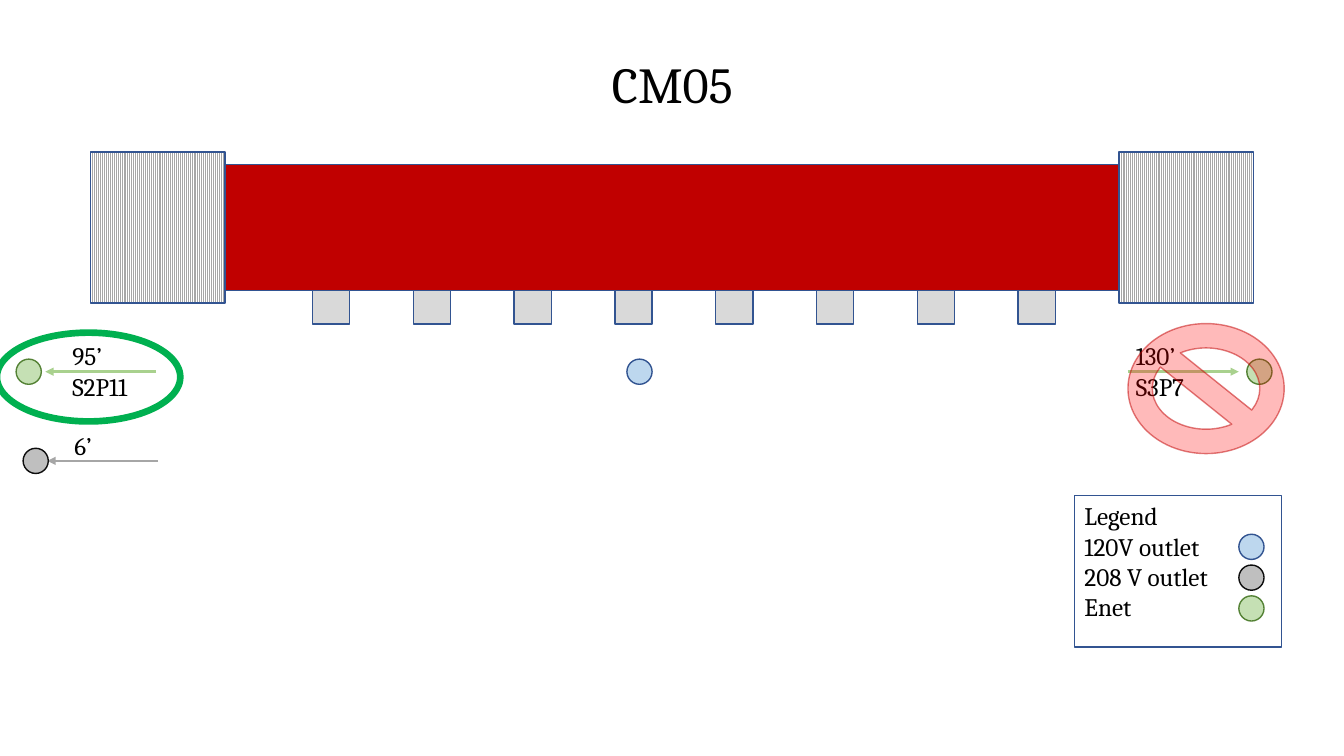
from dataclasses import dataclass

from lxml.etree import SubElement
from pptx import Presentation
from pptx.dml.color import RGBColor
from pptx.enum.dml import MSO_PATTERN
from pptx.enum.shapes import MSO_CONNECTOR, MSO_SHAPE
from pptx.enum.text import MSO_ANCHOR, MSO_AUTO_SIZE, PP_ALIGN
from pptx.oxml.ns import qn
from pptx.util import Pt


@dataclass(frozen=True)
class Theme:
    font: str = "Cambria"
    title_size: float = 36
    body_size: float = 18
    text: str = "000000"
    outline: str = "325491"
    module: str = "C00000"
    foot: str = "D9D9D9"
    hatch: str = "A6A6A6"
    paper: str = "FFFFFF"
    approved: str = "00B050"
    banned: str = "FF0000"
    banned_outline: str = "C00000"
    outlet_size: float = 18


THEME = Theme()
# Outlet kind: fill, outline, arrow
OUTLETS = {
    "120V": ("BDD7EE", THEME.outline, THEME.outline),
    "208V": ("BFBFBF", "0D0D0D", "A6A6A6"),
    "Enet": ("C5E0B4", "548235", "A9D18E"),
}
FRAME_FORMAT = {
    "word_wrap": False,
    "vertical_anchor": MSO_ANCHOR.TOP,
    "margin_left": Pt(7.2),
    "margin_right": Pt(7.2),
    "margin_top": Pt(3.6),
    "margin_bottom": Pt(3.6),
}


def color(value):
    return RGBColor.from_string(value)


def apply_format(target, values):
    for name, value in values.items():
        setattr(target, name, value)


def write_text(shape, text, size=THEME.body_size, alignment=PP_ALIGN.LEFT, **frame_values):
    frame = shape.text_frame
    frame.text = text
    apply_format(frame, FRAME_FORMAT | frame_values)
    for paragraph in frame.paragraphs:
        paragraph.alignment = alignment
        for run in paragraph.runs:
            apply_format(run.font, {"name": THEME.font, "size": Pt(size)})
            run.font.color.rgb = color(THEME.text)


def add_figure(shapes, kind, box, fill=None, outline=THEME.outline, weight=1):
    shape = shapes.add_shape(kind, *map(Pt, box))
    shape.shadow.inherit = False
    if fill:
        shape.fill.solid()
        shape.fill.fore_color.rgb = color(fill)
    else:
        shape.fill.background()
    shape.line.color.rgb = color(outline)
    shape.line.width = Pt(weight)
    return shape


def add_outlet(shapes, kind, left, middle):
    """Place an outlet circle by its left edge and its vertical middle."""
    size = THEME.outlet_size
    fill, outline, _ = OUTLETS[kind]
    add_figure(shapes, MSO_SHAPE.OVAL, (left, middle - size / 2, size, size), fill, outline)


def add_arrow(shapes, start, tip, middle, tint):
    arrow = shapes.add_connector(
        MSO_CONNECTOR.STRAIGHT, Pt(start), Pt(middle), Pt(tip), Pt(middle))
    arrow.line.color.rgb = color(tint)
    arrow.line.width = Pt(1.75)
    properties = arrow.element.spPr
    SubElement(properties.find(qn("a:ln")), qn("a:tailEnd"), type="triangle")
    SubElement(properties, qn("a:effectLst"))


def add_title(slide, box):
    title = slide.shapes.title
    apply_format(title, dict(zip(("left", "top", "width", "height"), map(Pt, box))))
    write_text(title, "CM05", THEME.title_size, PP_ALIGN.CENTER,
               auto_size=MSO_AUTO_SIZE.SHAPE_TO_FIT_TEXT)


def add_cryomodule(slide, box):
    """Draw the red body with its row of feet and a hatched cap at each end."""
    left, top, width, height = box
    shapes = slide.shapes.add_group_shape().shapes
    cap_width = 96
    body_left, body_top, body_height = left + 86.4, top + 9, 90
    add_figure(shapes, MSO_SHAPE.RECTANGLE,
               (body_left, body_top, width - 182.4 + 9.6, body_height), THEME.module)
    for index in range(8):
        add_figure(shapes, MSO_SHAPE.RECTANGLE,
                   (body_left + 72 * (index + 1), body_top + body_height, 26.6, 24), THEME.foot)
    for cap_left in (left, left + width - cap_width):
        cap = add_figure(shapes, MSO_SHAPE.RECTANGLE, (cap_left, top, cap_width, height))
        cap.fill.patterned()
        cap.fill.pattern = MSO_PATTERN.LIGHT_VERTICAL
        cap.fill.fore_color.rgb = color(THEME.hatch)
        cap.fill.back_color.rgb = color(THEME.paper)


def add_legend(slide, box):
    left, top, _, _ = box
    frame = add_figure(slide.shapes, MSO_SHAPE.RECTANGLE, box, weight=0.75)
    write_text(frame, "Legend\v120V outlet\n208 V outlet\nEnet")
    for row, kind in enumerate(OUTLETS):
        add_outlet(slide.shapes, kind, left + 117.4, top + 36.4 + 22 * row)


def add_cable_run(slide, box, kind, text, outlet_offset, text_offset):
    """Draw an arrow towards an outlet; the box is the arrow's left, middle and width,
    then the label's width and height."""
    left, middle, length, text_width, text_height = box
    shapes = slide.shapes.add_group_shape().shapes
    ends = (left + length, left) if outlet_offset < 0 else (left, left + length)
    add_arrow(shapes, *ends, middle, OUTLETS[kind][2])
    label = shapes.add_textbox(
        *map(Pt, (left + text_offset, middle - 25.7, text_width, text_height)))
    write_text(label, text, auto_size=MSO_AUTO_SIZE.SHAPE_TO_FIT_TEXT)
    add_outlet(shapes, kind, left + outlet_offset, middle)


def add_ban(slide, box):
    """Lay a see-through prohibition sign over the box."""
    sign = add_figure(slide.shapes, MSO_SHAPE.NO_SYMBOL, box, THEME.banned, THEME.banned_outline)
    tints = sign.element.spPr.iter(qn("a:srgbClr"))
    for tint, opacity in zip(list(tints), (27, 50)):
        SubElement(tint, qn("a:alpha"), val=str(opacity * 1000))


def main():
    presentation = Presentation()
    apply_format(presentation, {"slide_width": Pt(960), "slide_height": Pt(540)})
    slide = presentation.slides.add_slide(presentation.slide_layouts[5])
    add_title(slide, (427.7, 34.6, 105.1, 51.1))
    add_cryomodule(slide, (64.8, 108.5, 830.4, 108))
    add_legend(slide, (767.5, 354.2, 147.6, 108))
    add_cable_run(slide, (32.4, 265.5, 79.2, 64.1, 51.1), "Enet", "95’\nS2P11", -20.9, 12.2)
    add_cable_run(slide, (805.7, 265.5, 79.2, 54, 51.1), "Enet", "130’\nS3P7", 84.9, -1.5)
    add_outlet(slide.shapes, "120V", 447.8, 265.5)
    add_cable_run(slide, (33.8, 329.2, 79.2, 28.8, 28.8), "208V", "6’", -17.3, 12.2)
    add_figure(slide.shapes, MSO_SHAPE.OVAL, (-2.2, 237.6, 131, 63.4),
               outline=THEME.approved, weight=4.75)
    add_ban(slide, (805.7, 231.1, 111.6, 92.9))
    presentation.save("out.pptx")


if __name__ == "__main__":
    main()
